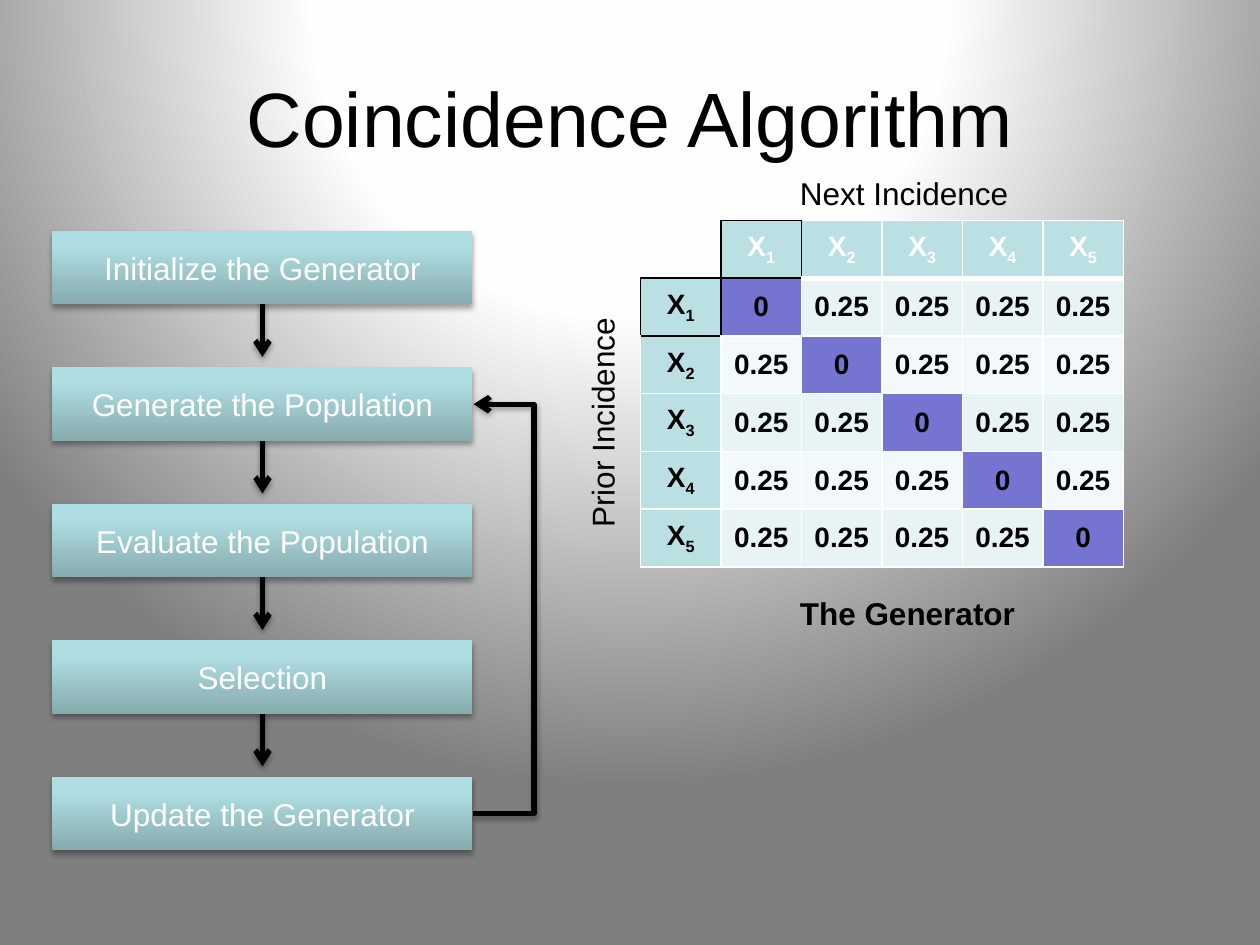
from dataclasses import dataclass

from pptx import Presentation
from pptx import util as u
from pptx.dml.color import RGBColor
from pptx.enum import shapes, text
from pptx.oxml import ns, parse_xml

SCALE = 7620  # EMU per px, 120 px to the inch
COLORS = {
    "ink": "000000", "paper": "FFFFFF", "header": "BBE0E3", "diagonal": "7575D1",
    "odd": "E7F3F4", "even": "F3F9FA",
}
BACKDROP = [(0, "FFFFFF"), (40, "FEFEFE"), (100, "7F7F7F")]
BOX_SHADE = [(0, "87ABAE"), (80, "AFDEE2"), (100, "AFE0E4")]
BACKDROP_AIM = ('<a:path path="circle"><a:fillToRect l="50000" t="-80000" '
                'r="50000" b="180000"/></a:path>')
BOX_AIM = '<a:lin ang="16200000" scaled="0"/>'

# Flow chart: equal boxes at an equal pitch
STEPS = ["Initialize the Generator", "Generate the Population",
         "Evaluate the Population", "Selection", "Update the Generator"]
BOX_LEFT, BOX_TOP, BOX_WIDTH, BOX_HEIGHT, PITCH = 50, 220, 400, 70, 130
ARROW_START, ARROW_LENGTH, LOOP_REACH = 60, 60, 59

# Generator table
STATES = 5
TABLE_LEFT, TABLE_TOP, TABLE_WIDTH, TABLE_HEIGHT = 610, 210, 460, 330
OUTLINED = {(0, 1), (1, 0)}
EDGES = {"lnL": (0, -1), "lnR": (0, 1), "lnT": (-1, 0), "lnB": (1, 0)}


@dataclass
class Label:
    words: str
    left: int
    top: int
    width: int
    height: int
    size: int = 18
    bold: bool = False
    rotation: int = 0
    centred: bool = False


LABELS = [
    Label("Coincidence Algorithm", 60, 36, 1080, 150, size=44, centred=True),
    Label("Prior Incidence", 461, 378, 225, 48, rotation=270),
    Label("Next Incidence", 750, 160, 225, 48),
    Label("The Generator", 750, 560, 238, 48, bold=True),
]


def px(*lengths: int) -> list:
    return [u.Emu(length * SCALE) for length in lengths]


def xml(tag: str, inner: str = "", attributes: str = ""):
    return parse_xml(f'<a:{tag} {ns.nsdecls("a")} {attributes}>{inner}</a:{tag}>')


def solid(color: str) -> str:
    return f'<a:solidFill><a:srgbClr val="{COLORS[color]}"/></a:solidFill>'


def assign(target, values: dict) -> None:
    for name, value in values.items():
        setattr(target, name, value)


def add_span(para, words: str, size: int, color: str, bold: bool = False):
    span = para.add_run()
    span.text = words
    assign(span.font, {"name": "Arial", "size": u.Pt(size), "bold": bold})
    span.font.color.rgb = RGBColor.from_string(COLORS[color])
    return span


def paint_gradient(fill, element, stops: list, aim: str) -> None:
    fill.gradient()
    old = element.find(".//" + ns.qn("a:gradFill"))
    marks = "".join(f'<a:gs pos="{at * 1000}"><a:srgbClr val="{color}"/></a:gs>'
                    for at, color in stops)
    new = xml("gradFill", f"<a:gsLst>{marks}</a:gsLst>{aim}", 'rotWithShape="1"')
    old.getparent().replace(old, new)


def add_shadow(properties) -> None:
    properties.append(xml("effectLst", (
        '<a:outerShdw blurRad="40000" dist="23000" dir="5400000" rotWithShape="0">'
        f'<a:srgbClr val="{COLORS["ink"]}"><a:alpha val="35000"/></a:srgbClr>'
        '</a:outerShdw>')))


def add_arrow(page, kind, start: tuple, end: tuple):
    arrow = page.shapes.add_connector(kind, *px(*start, *end))
    arrow.line.width = u.Pt(3)
    arrow.line.color.rgb = RGBColor.from_string(COLORS["ink"])
    properties = arrow._element.spPr
    properties.find(ns.qn("a:ln")).append(xml("tailEnd", attributes='type="arrow"'))
    add_shadow(properties)
    return arrow


def add_step(page, words: str, top: int) -> None:
    box = page.shapes.add_shape(shapes.MSO_SHAPE.RECTANGLE,
                                *px(BOX_LEFT, top, BOX_WIDTH, BOX_HEIGHT))
    paint_gradient(box.fill, box._element.spPr, BOX_SHADE, BOX_AIM)
    box.line.fill.background()
    add_shadow(box._element.spPr)
    assign(box.text_frame, {"word_wrap": True, "vertical_anchor": text.MSO_ANCHOR.MIDDLE})
    para = box.text_frame.paragraphs[0]
    para.alignment = text.PP_ALIGN.CENTER
    add_span(para, words, 18, "paper")


def add_label(page, label: Label) -> None:
    box = page.shapes.add_textbox(*px(label.left, label.top, label.width, label.height))
    box.rotation = label.rotation
    para = box.text_frame.paragraphs[0]
    box.text_frame.word_wrap = label.centred
    if label.centred:
        box.text_frame.vertical_anchor = text.MSO_ANCHOR.MIDDLE
        para.alignment = text.PP_ALIGN.CENTER
    else:
        box.text_frame.auto_size = text.MSO_AUTO_SIZE.SHAPE_TO_FIT_TEXT
    add_span(para, label.words, label.size, "ink", label.bold)


def add_borders(cell, row: int, column: int) -> None:
    """An edge is dark if a cell on either side of it is outlined."""
    for tag, (down, across) in EDGES.items():
        neighbour = (row + down, column + across)
        dark = bool(OUTLINED & {(row, column), neighbour})
        if (row, column) == (0, 0) and not dark:
            line, width = "<a:noFill/>", 0
        else:
            line = solid("ink" if dark else "paper")
            width = 3 if tag == "lnB" and row == 0 and not dark else 1
        cell._tc.get_or_add_tcPr().append(xml(tag, line, f'w="{width * 12700}"'))


def fill_cell(cell, row: int, column: int) -> None:
    add_borders(cell, row, column)
    if row == column == 0:
        cell.fill.background()
        return
    side, end = px(11, 5)
    assign(cell, {"margin_left": side, "margin_right": side, "margin_top": end,
                  "margin_bottom": end, "vertical_anchor": text.MSO_ANCHOR.MIDDLE})
    para = cell.text_frame.paragraphs[0]
    para.alignment = text.PP_ALIGN.CENTER
    if row == 0 or column == 0:
        shade, color = "header", "paper" if row == 0 else "ink"
        add_span(para, "X", 16, color, True)
        index = add_span(para, str(row + column), 16, color, True)
        index._r.get_or_add_rPr().set("baseline", "-25000")
    else:
        shade = "diagonal" if row == column else "odd" if row % 2 else "even"
        add_span(para, "0" if row == column else "0.25", 16, "ink", True)
    cell.fill.solid()
    cell.fill.fore_color.rgb = RGBColor.from_string(COLORS[shade])


def add_generator(page) -> None:
    count = STATES + 1
    table = page.shapes.add_table(
        count, count, *px(TABLE_LEFT, TABLE_TOP, TABLE_WIDTH, TABLE_HEIGHT)).table
    assign(table, {"first_row": False, "horz_banding": False})
    for row in range(count):
        for column in range(count):
            fill_cell(table.cell(row, column), row, column)


def main() -> None:
    deck = Presentation()
    deck.slide_width, deck.slide_height = px(1200, 900)
    page = deck.slides.add_slide(deck.slide_layouts[6])
    paint_gradient(page.background.fill, page._element, BACKDROP, BACKDROP_AIM)

    # Arrows between steps, behind the boxes
    tops = [BOX_TOP + PITCH * number for number in range(len(STEPS))]
    middle, right = BOX_LEFT + BOX_WIDTH // 2, BOX_LEFT + BOX_WIDTH
    for top in tops[:-1]:
        start = top + ARROW_START
        add_arrow(page, shapes.MSO_CONNECTOR.STRAIGHT,
                  (middle, start), (middle, start + ARROW_LENGTH))

    # Loop from the last step back to the second; one px wide, so the bend is in px
    half = BOX_HEIGHT // 2
    loop = add_arrow(page, shapes.MSO_CONNECTOR.ELBOW,
                     (right, tops[-1] + half), (right + 1, tops[1] + half))
    loop._element.spPr.prstGeom.get_or_add_avLst().append(
        xml("gd", attributes=f'name="adj1" fmla="val {LOOP_REACH * 100000}"'))

    for words, top in zip(STEPS, tops):
        add_step(page, words, top)

    # Generator table, title and captions
    add_generator(page)
    for label in LABELS:
        add_label(page, label)
    deck.save("out.pptx")


if __name__ == "__main__":
    main()
